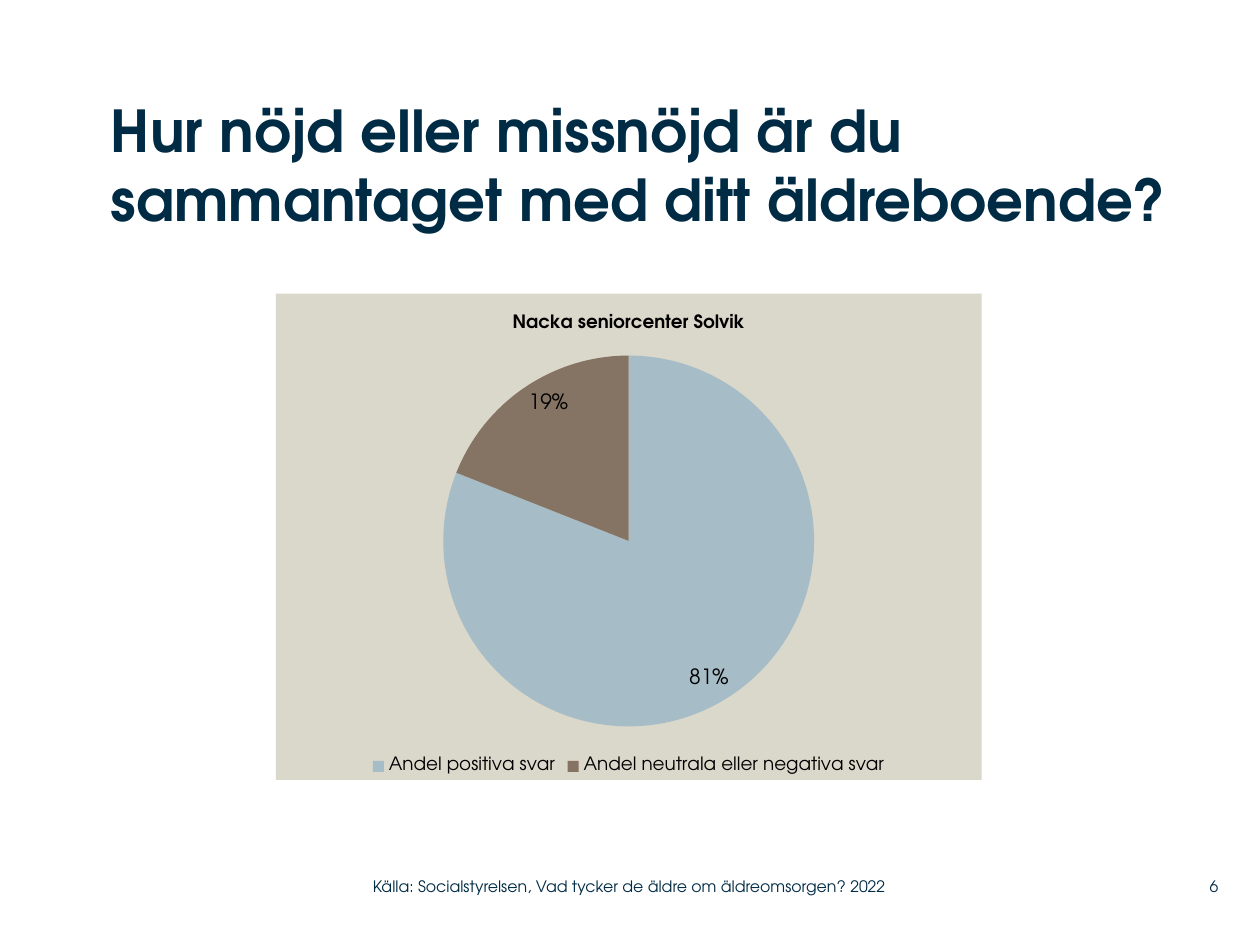
import pptx
import pptx.chart.data
import pptx.dml.color
import pptx.enum.chart
import pptx.enum.text
import pptx.oxml
import pptx.util

Pt = pptx.util.Pt
Rgb = pptx.dml.color.RGBColor.from_string
Align = pptx.enum.text.PP_ALIGN
Anchor = pptx.enum.text.MSO_ANCHOR
FACE = "TeX Gyre Adventor"
COLORS = {"navy": "002B45", "black": "000000", "sand": "DAD7CB",
          "blue": "A6BCC6", "brown": "857363"}


def style(font, size, color, bold=False):
    font.name = FACE
    font.size = Pt(size)
    font.bold = bold
    font.color.rgb = Rgb(COLORS[color])


def write(shape, text, size, anchor, align, bold=False):
    frame = shape.text_frame
    frame.text = text
    frame.word_wrap = True
    frame.auto_size = pptx.enum.text.MSO_AUTO_SIZE.NONE
    frame.vertical_anchor = anchor
    frame.margin_left = frame.margin_right = 0
    frame.margin_top = frame.margin_bottom = 0
    line = frame.paragraphs[0]
    line.alignment = align
    style(line.runs[0].font, size, "navy", bold)


deck = pptx.Presentation()
deck.slide_width, deck.slide_height = Pt(720), Pt(540)
slide = deck.slides.add_slide(deck.slide_layouts[5])

title = slide.shapes.title
title.left, title.top = Pt(63.4), Pt(54)
title.width, title.height = Pt(635.8), Pt(102.2)
write(title, "Hur nöjd eller missnöjd är du sammantaget med ditt äldreboende?",
      33, Anchor.TOP, Align.LEFT, True)

data = pptx.chart.data.CategoryChartData()
data.categories = ["Andel positiva svar", "Andel neutrala eller negativa svar"]
data.add_series("Series 1", (81, 19))
chart = slide.shapes.add_chart(
    pptx.enum.chart.XL_CHART_TYPE.PIE,
    Pt(157.7), Pt(167.8), Pt(403.2), Pt(277.9), data).chart
style(chart.font, 18, "black")

chart.has_title = True
head = chart.chart_title.text_frame
head.text = "Nacka seniorcenter Solvik"
style(head.paragraphs[0].runs[0].font, 10.5, "black", True)
chart.chart_title.include_in_layout = False

chart.has_legend = True
chart.legend.position = pptx.enum.chart.XL_LEGEND_POSITION.BOTTOM
chart.legend.include_in_layout = False
style(chart.legend.font, 10.5, "black")

plot = chart.plots[0]
plot.vary_by_categories = True
for i, name in enumerate(("blue", "brown")):
    fill = plot.series[0].points[i].format.fill
    fill.solid()
    fill.fore_color.rgb = Rgb(COLORS[name])

plot.has_data_labels = True
labels = plot.data_labels
labels.show_percentage = True
labels.show_value = False
labels.number_format = "0%"
labels.number_format_is_linked = False
labels.position = pptx.enum.chart.XL_LABEL_POSITION.INSIDE_END
style(labels.font, 12, "black")

space = chart.element
back = pptx.oxml.parse_xml(
    '<c:spPr xmlns:c="http://schemas.openxmlformats.org/drawingml/2006/chart"'
    ' xmlns:a="http://schemas.openxmlformats.org/drawingml/2006/main">'
    f'<a:solidFill><a:srgbClr val="{COLORS["sand"]}"/></a:solidFill>'
    '<a:ln><a:noFill/></a:ln></c:spPr>')
space.find(pptx.oxml.ns.qn("c:chart")).addnext(back)

for left, width, text, align in (
        (213.1, 319, "Källa: Socialstyrelsen, Vad tycker de äldre om äldreomsorgen? 2022",
         Align.LEFT),
        (662.4, 33.8, "6", Align.RIGHT)):
    box = slide.shapes.add_textbox(Pt(left), Pt(496.1), Pt(width), Pt(20.9))
    write(box, text, 9, Anchor.MIDDLE, align)

deck.save("out.pptx")
